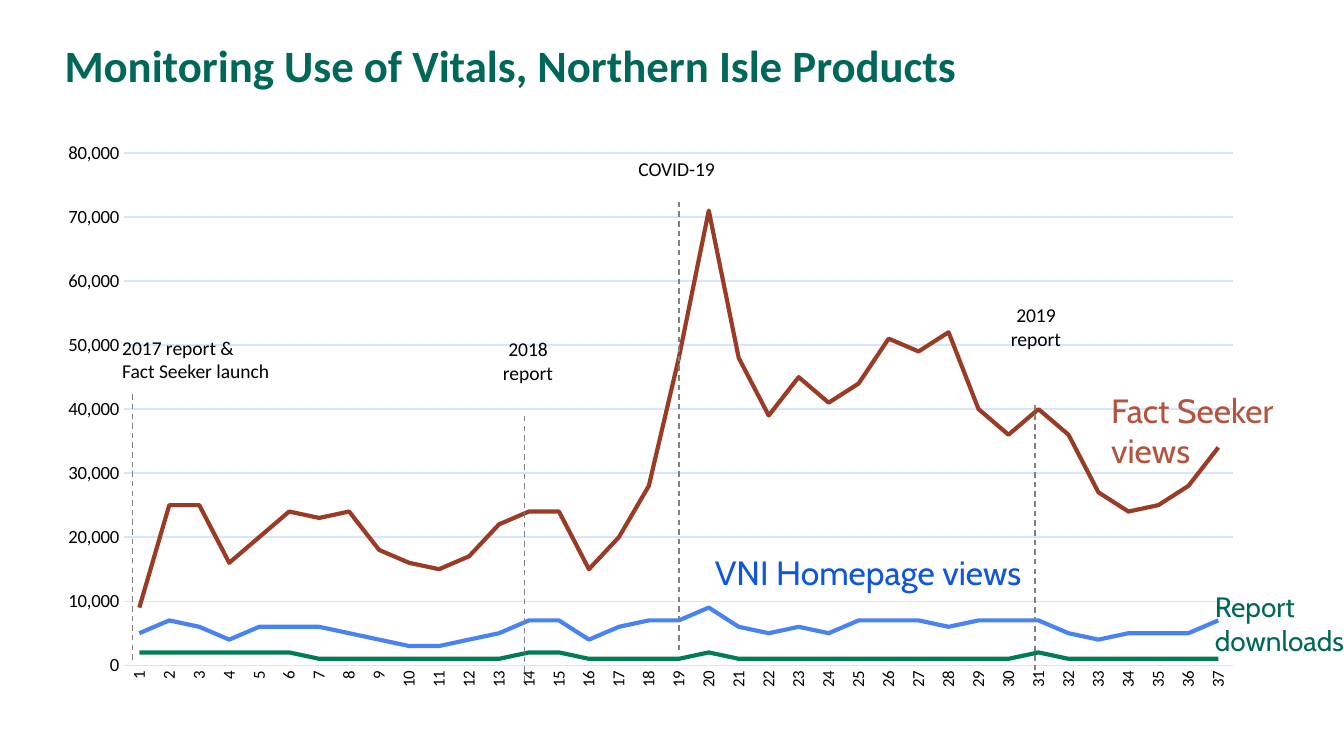
from lxml import etree
from pptx import Presentation
from pptx.chart.data import CategoryChartData
from pptx.dml.color import RGBColor
from pptx.enum.chart import XL_CHART_TYPE, XL_MARKER_STYLE, XL_TICK_MARK
from pptx.enum.dml import MSO_LINE
from pptx.enum.shapes import MSO_CONNECTOR
from pptx.enum.text import MSO_ANCHOR, PP_ALIGN
from pptx.oxml.ns import qn
from pptx.util import Cm, Pt

LINE = XL_CHART_TYPE.LINE
BARE = XL_MARKER_STYLE.NONE
NO_TICK = XL_TICK_MARK.NONE
DASH = MSO_LINE.DASH
STRAIGHT = MSO_CONNECTOR.STRAIGHT
TOP, BOTTOM = MSO_ANCHOR.TOP, MSO_ANCHOR.BOTTOM
LEFT, CENTER = PP_ALIGN.LEFT, PP_ALIGN.CENTER

BLACK = RGBColor(0x00, 0x00, 0x00)
GREY = RGBColor(0x80, 0x80, 0x80)
PALE = RGBColor(0xD8, 0xE5, 0xFC)
TEAL = RGBColor(0x00, 0x68, 0x58)
GREEN = RGBColor(0x00, 0x7D, 0x57)
BLUE = RGBColor(0x49, 0x83, 0xF2)
NAVY = RGBColor(0x10, 0x56, 0xDC)
RUST = RGBColor(0x9A, 0x3B, 0x26)
BRICK = RGBColor(0xB4, 0x53, 0x40)

# Monthly counts, in thousands
SERIES = [
    ("Series 1", BLUE,
     [5, 7, 6, 4, 6, 6, 6, 5, 4, 3, 3, 4, 5, 7, 7, 4, 6, 7, 7, 9, 6, 5, 6, 5,
      7, 7, 7, 6, 7, 7, 7, 5, 4, 5, 5, 5, 7]),
    ("Series 2", GREEN,
     [2, 2, 2, 2, 2, 2, 1, 1, 1, 1, 1, 1, 1, 2, 2, 1, 1, 1, 1, 2, 1, 1, 1, 1,
      1, 1, 1, 1, 1, 1, 2, 1, 1, 1, 1, 1, 1]),
    ("Series 3", RUST,
     [9, 25, 25, 16, 20, 24, 23, 24, 18, 16, 15, 17, 22, 24, 24, 15, 20, 28,
      48, 71, 48, 39, 45, 41, 44, 51, 49, 52, 40, 36, 40, 36, 27, 24, 25, 28,
      34]),
]
# Line x, bottom, top; label box; label text; alignment
EVENTS = [
    (2.51, 12.47, 7.39, (2.06, 6.22, 3.99, 1.17),
     ["2017 report &", "Fact Seeker launch"], LEFT),
    (9.91, 12.88, 7.82, (8.99, 6.25, 1.98, 1.24), ["2018 report"], CENTER),
    (12.83, 12.29, 3.76, (11.56, 2.84, 2.54, 0.76), ["COVID-19 "], CENTER),
    (19.56, 12.67, 7.59, (18.59, 5.61, 1.98, 1.24), ["2019 report"], CENTER),
]
NAMES = [
    ((20.75, 7.24, 3.78, 1.85), "Fact Seeker views", 18, BRICK),
    ((13.26, 10.31, 12.7, 1.02), "VNI Homepage views", 18, NAVY),
    ((22.71, 11.02, 3.12, 1.55), "Report downloads", 15, TEAL),
]
FRAME = {"x": 0.074, "y": 0.018, "w": 0.907, "h": 0.861}


class Board:
    """Holds the text style and the slide being filled."""

    base = {"name": "Calibri", "size": Pt(10.5), "bold": False}

    def __init__(self, slide):
        self.shapes = slide.shapes

    def style(self, font, color, **extra):
        for key, value in {**self.base, **extra}.items():
            setattr(font, key, value)
        font.color.rgb = color

    def stroke(self, line, color, width):
        line.color.rgb = color
        line.width = Pt(width)

    def text(self, box, lines, color=BLACK, align=LEFT, anchor=TOP,
             lead=None, **extra):
        frame = self.shapes.add_textbox(*map(Cm, box)).text_frame
        frame.word_wrap = True
        frame.vertical_anchor = anchor
        for i, line in enumerate(lines):
            para = frame.paragraphs[0] if i == 0 else frame.add_paragraph()
            para.alignment = align
            para.line_spacing = lead
            run = para.add_run()
            run.text = line
            self.style(run.font, color, **extra)

    def rule(self, x, low, high):
        rule = self.shapes.add_connector(
            STRAIGHT, Cm(x), Cm(low), Cm(x), Cm(high))
        self.stroke(rule.line, GREY, 0.75)
        rule.line.dash_style = DASH
        etree.SubElement(rule._element.spPr, qn("a:effectLst"))

    def chart(self, box, series):
        data = CategoryChartData(number_format="#,##0")
        data.categories = [str(n + 1) for n in range(len(series[0][2]))]
        for name, _, counts in series:
            data.add_series(name, [n * 1000 for n in counts])
        chart = self.shapes.add_chart(LINE, *map(Cm, box), data).chart
        chart.has_legend = chart.has_title = False
        self.style(chart.font, NAVY, size=Pt(10))
        plot = chart.plots[0]
        plot.vary_by_categories = False
        for item, (_, color, _) in zip(plot.series, series):
            item.smooth = False
            item.marker.style = BARE
            self.stroke(item.format.line, color, 2.25)
        self.axes(chart)
        self.place(chart)

    def axes(self, chart):
        cat, val = chart.category_axis, chart.value_axis
        for axis, size in ((cat, 9), (val, 10)):
            axis.major_tick_mark = axis.minor_tick_mark = NO_TICK
            self.style(axis.tick_labels.font, BLACK, size=Pt(size))
        self.stroke(cat.format.line, PALE, 0.75)
        turn = cat._element.find(qn("c:txPr")).find(qn("a:bodyPr"))
        turn.set("rot", "-5400000")
        turn.set("vert", "horz")
        val.minimum_scale, val.maximum_scale = 0, 80000
        val.major_unit = 10000
        val.format.line.fill.background()
        self.stroke(val.major_gridlines.format.line, PALE, 0.75)
        val.tick_labels.number_format = "#,##0"
        val.tick_labels.number_format_is_linked = False

    def place(self, chart):
        """Fix the inner plot area as fractions of the chart."""
        area = chart._chartSpace.chart.plotArea
        for old in area.findall(qn("c:layout")):
            area.remove(old)
        outer = etree.Element(qn("c:layout"))
        area.insert(0, outer)
        inner = etree.SubElement(outer, qn("c:manualLayout"))
        rules = {"layoutTarget": "inner", "xMode": "edge", "yMode": "edge",
                 **FRAME}
        for tag, value in rules.items():
            etree.SubElement(inner, qn("c:" + tag)).set("val", str(value))


def main():
    deck = Presentation()
    deck.slide_width, deck.slide_height = Cm(25.4), Cm(14.29)
    board = Board(deck.slides.add_slide(deck.slide_layouts[6]))
    board.text((0.97, 0.61, 22.48, 1.24),
               ["Monitoring Use of Vitals, Northern Isle Products"], TEAL,
               anchor=BOTTOM, lead=Pt(30), size=Pt(24), bold=True)
    board.chart((0.64, 2.69, 23.11, 11.25), SERIES)
    for x, low, high, box, lines, align in EVENTS:
        board.rule(x, low, high)
        board.text(box, lines, align=align)
    for box, name, size, color in NAMES:
        board.text(box, [name], color, name="Cabin", size=Pt(size))
    deck.save("out.pptx")


if __name__ == "__main__":
    main()
